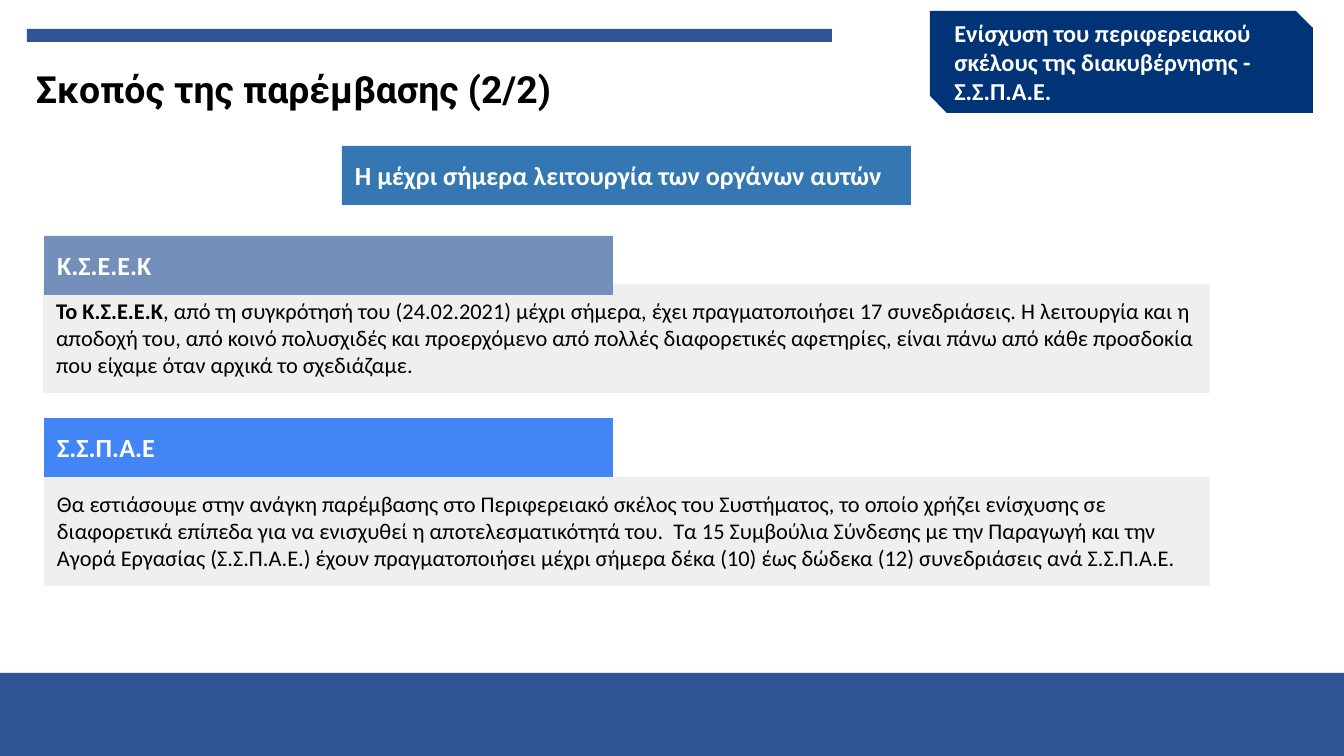
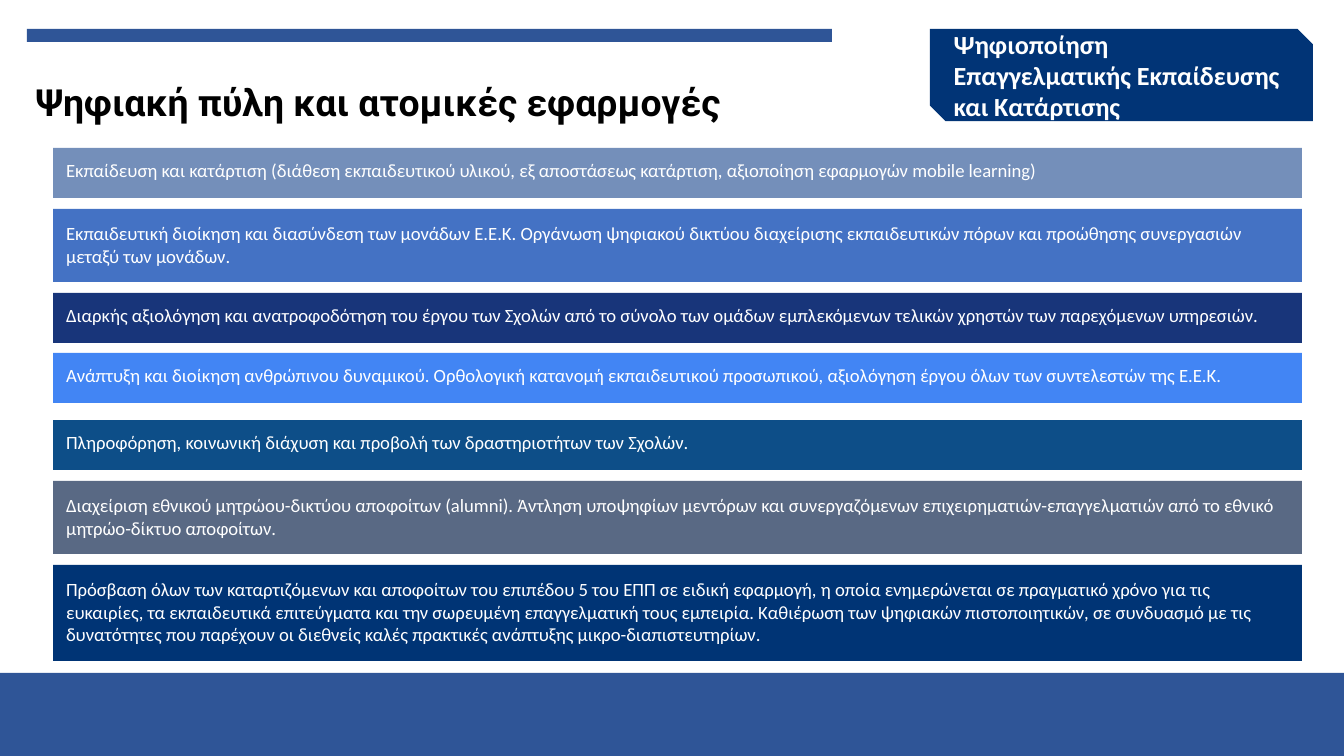
import pptx
import pptx.dml.color
import pptx.enum.shapes
import pptx.enum.text
import pptx.util

SLIDE_WIDTH, SLIDE_HEIGHT = 1344, 756
EMU_PER_PX = 914400 / 134.4
TITLE_ONLY_LAYOUT = 5

COLOURS = {
    "black": "000000",
    "white": "FFFFFF",
    "band": "2F5597",
    "navy": "013476",
    "steel": "3477B2",
    "slate": "748FBA",
    "bright": "4285F4",
    "pale": "EFEFEF",
    "royal": "4472C4",
    "indigo": "18357A",
    "ocean": "0D4E88",
    "grey": "596984",
    "deep": "003475",
}

RECTANGLE = pptx.enum.shapes.MSO_SHAPE.RECTANGLE
SNIPPED = pptx.enum.shapes.MSO_SHAPE.SNIP_2_DIAG_RECTANGLE
TOP = pptx.enum.text.MSO_ANCHOR.TOP
MIDDLE = pptx.enum.text.MSO_ANCHOR.MIDDLE

HEADING_WIDTH, HEADING_HEIGHT = 569, 59
BODY_HEIGHT = 109
ROW_LEFT, ROW_WIDTH = 53, 1249
ROW_PADDING, ROW_LINE = 27, 23

# top, number of text lines, colour, text
APPLICATIONS = [
    (148, 1, "slate",
     "Εκπαίδευση και κατάρτιση (διάθεση εκπαιδευτικού υλικού, εξ αποστάσεως "
     "κατάρτιση, αξιοποίηση εφαρμογών mobile learning)"),
    (209, 2, "royal",
     "Εκπαιδευτική διοίκηση και διασύνδεση των μονάδων Ε.Ε.Κ. Οργάνωση "
     "ψηφιακού δικτύου διαχείρισης εκπαιδευτικών πόρων και προώθησης "
     "συνεργασιών μεταξύ των μονάδων."),
    (293, 1, "indigo",
     "Διαρκής αξιολόγηση και ανατροφοδότηση του έργου των Σχολών από το "
     "σύνολο των ομάδων εμπλεκόμενων τελικών χρηστών των παρεχόμενων "
     "υπηρεσιών."),
    (353, 1, "bright",
     "Ανάπτυξη και διοίκηση ανθρώπινου δυναμικού. Ορθολογική κατανομή "
     "εκπαιδευτικού προσωπικού, αξιολόγηση έργου όλων των συντελεστών της "
     "Ε.Ε.Κ."),
    (420, 1, "ocean",
     "Πληροφόρηση, κοινωνική διάχυση και προβολή των δραστηριοτήτων των "
     "Σχολών."),
    (481, 2, "grey",
     "Διαχείριση εθνικού μητρώου-δικτύου αποφοίτων (alumni). Άντληση "
     "υποψηφίων μεντόρων και συνεργαζόμενων επιχειρηματιών-επαγγελματιών "
     "από το εθνικό μητρώο-δίκτυο αποφοίτων."),
    (565, 3, "deep",
     "Πρόσβαση όλων των καταρτιζόμενων και αποφοίτων του επιπέδου 5 του ΕΠΠ "
     "σε ειδική εφαρμογή, η οποία ενημερώνεται σε πραγματικό χρόνο για τις "
     "ευκαιρίες, τα εκπαιδευτικά επιτεύγματα και την σωρευμένη επαγγελματική "
     "τους εμπειρία. Καθιέρωση των ψηφιακών πιστοποιητικών, σε συνδυασμό με "
     "τις δυνατότητες που παρέχουν οι διεθνείς καλές πρακτικές ανάπτυξης "
     "μικρο-διαπιστευτηρίων."),
]


def px(length):
    return pptx.util.Emu(round(length * EMU_PER_PX))


def rgb(colour):
    return pptx.dml.color.RGBColor.from_string(COLOURS[colour])


def write_text(shape, text, *, size, lead="", bold=False, font="Calibri",
               colour="white", anchor=TOP, margins=(13, 13), grow=False,
               line_spacing=None):
    """Fill the shape with one paragraph; lead is a bold opening."""
    frame = shape.text_frame
    frame.word_wrap = True
    frame.vertical_anchor = anchor
    frame.margin_left = frame.margin_right = px(margins[0])
    frame.margin_top = frame.margin_bottom = px(margins[1])
    fit = pptx.enum.text.MSO_AUTO_SIZE
    frame.auto_size = fit.SHAPE_TO_FIT_TEXT if grow else fit.NONE
    paragraph = frame.paragraphs[0]
    paragraph.alignment = pptx.enum.text.PP_ALIGN.LEFT
    paragraph.line_spacing = line_spacing
    for words, is_bold in ((lead, True), (text, bold)):
        if words:
            run = paragraph.add_run()
            run.text = words
            run.font.name = font
            run.font.size = pptx.util.Pt(size)
            run.font.bold = is_bold
            run.font.color.rgb = rgb(colour)


def add_block(slide, left, top, width, height, fill, kind=RECTANGLE):
    shape = slide.shapes.add_shape(kind, px(left), px(top), px(width), px(height))
    shape.shadow.inherit = False
    shape.fill.solid()
    shape.fill.fore_color.rgb = rgb(fill)
    shape.line.fill.background()
    return shape


def add_footer_band(presentation, layout):
    """Draw the bottom band once, on the layout that the slides share."""
    slide = presentation.slides[0]
    band = add_block(slide, 0, 673, SLIDE_WIDTH, SLIDE_HEIGHT - 673, "band")
    layout.shapes.element.insert(2, band.element)


def add_title(slide, text, top, height):
    title = slide.shapes.title
    title.left, title.top = px(27), px(top)
    title.width, title.height = px(949), px(height)
    write_text(title, text, size=20, bold=True, font="Roboto", colour="black",
               margins=(9, 5), line_spacing=1.15)
    add_block(slide, 27, 29, 805, 13, "band")


def add_topic_tag(slide, text, top, height, size):
    tag = add_block(slide, 930, top, 383, height, "navy", SNIPPED)
    tag.adjustments[0] = 0
    tag.adjustments[1] = 0.167
    write_text(tag, text, size=size, bold=True, anchor=MIDDLE, margins=(16, 3))


def add_heading(slide, text, left, top, fill):
    heading = add_block(slide, left, top, HEADING_WIDTH, HEADING_HEIGHT, fill)
    write_text(heading, text, size=14, bold=True, grow=True)


def add_body(slide, text, left, top, lead=""):
    body = add_block(slide, left, top, 1210 - left, BODY_HEIGHT, "pale")
    write_text(body, text, size=12, lead=lead, colour="black", grow=True)


def build_purpose(slide):
    add_title(slide, "Σκοπός της παρέμβασης (2/2)", 54, 60)
    add_topic_tag(slide, "Ενίσχυση του περιφερειακού σκέλους της "
                  "διακυβέρνησης - Σ.Σ.Π.Α.Ε.", 11, 102, 13)
    add_heading(slide, "Η μέχρι σήμερα λειτουργία των οργάνων αυτών",
                342, 146, "steel")
    add_body(slide, ", από τη συγκρότησή του (24.02.2021) μέχρι σήμερα, έχει "
             "πραγματοποιήσει 17 συνεδριάσεις. Η λειτουργία και η αποδοχή "
             "του, από κοινό πολυσχιδές και προερχόμενο από πολλές "
             "διαφορετικές αφετηρίες, είναι πάνω από κάθε προσδοκία που "
             "είχαμε όταν αρχικά το σχεδιάζαμε.", 43, 284, lead="Το Κ.Σ.Ε.Ε.Κ")
    add_body(slide, "Θα εστιάσουμε στην ανάγκη παρέμβασης στο Περιφερειακό "
             "σκέλος του Συστήματος, το οποίο χρήζει ενίσχυσης σε διαφορετικά "
             "επίπεδα για να ενισχυθεί η αποτελεσματικότητά του.  Τα 15 "
             "Συμβούλια Σύνδεσης με την Παραγωγή και την Αγορά Εργασίας "
             "(Σ.Σ.Π.Α.Ε.) έχουν πραγματοποιήσει μέχρι σήμερα δέκα (10) έως "
             "δώδεκα (12) συνεδριάσεις ανά Σ.Σ.Π.Α.Ε.", 44, 477)
    add_heading(slide, "Κ.Σ.Ε.Ε.Κ", 44, 236, "slate")
    add_heading(slide, "Σ.Σ.Π.Α.Ε", 44, 418, "bright")


def build_applications(slide):
    add_title(slide, "Ψηφιακή πύλη και ατομικές εφαρμογές", 67, 54)
    add_topic_tag(slide, "Ψηφιοποίηση Επαγγελματικής Εκπαίδευσης και "
                  "Κατάρτισης", 29, 92, 14)
    for top, lines, fill, text in APPLICATIONS:
        height = ROW_PADDING + lines * ROW_LINE
        row = add_block(slide, ROW_LEFT, top, ROW_WIDTH, height, fill)
        write_text(row, text, size=10, grow=True)


def main():
    presentation = pptx.Presentation()
    presentation.slide_width = px(SLIDE_WIDTH)
    presentation.slide_height = px(SLIDE_HEIGHT)
    layout = presentation.slide_layouts[TITLE_ONLY_LAYOUT]
    for build in (build_purpose, build_applications):
        build(presentation.slides.add_slide(layout))
    add_footer_band(presentation, layout)
    presentation.save("out.pptx")


if __name__ == "__main__":
    main()
